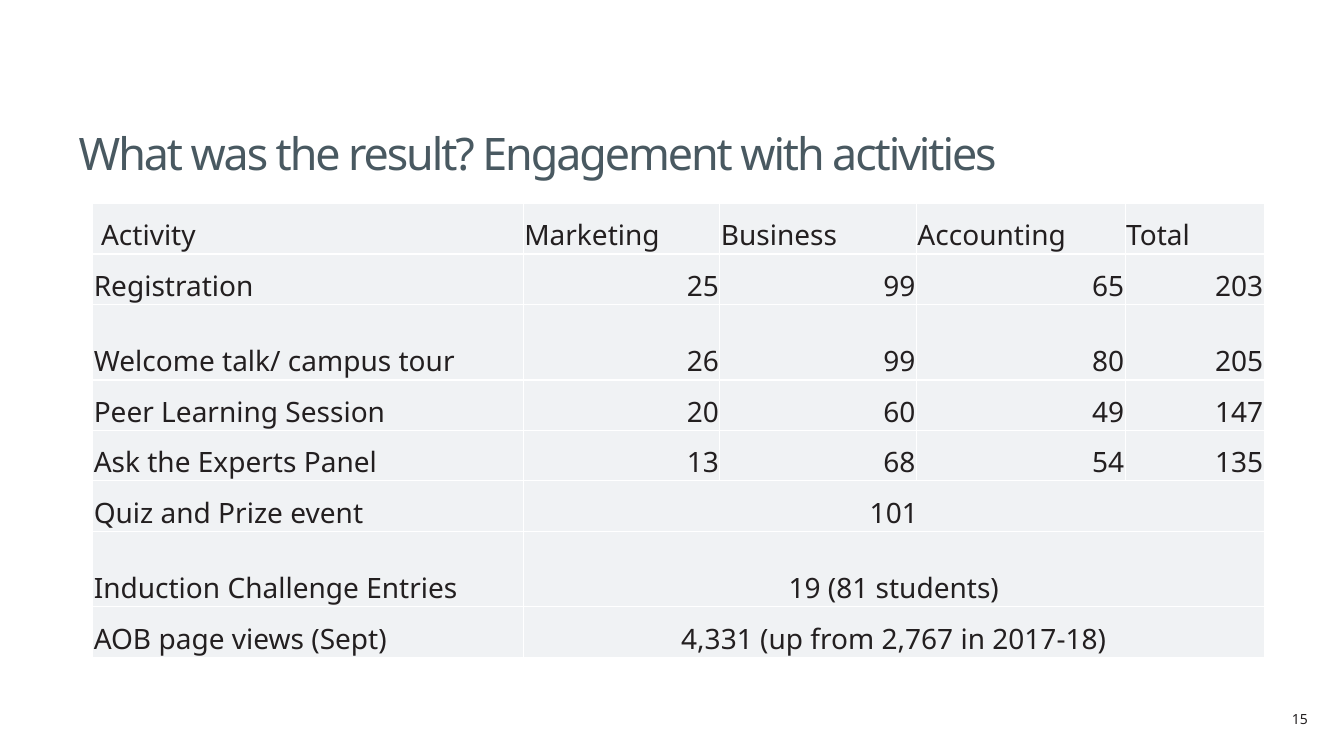
import pptx
import pptx.dml.color
import pptx.enum.text
import pptx.oxml
import pptx.oxml.ns
import pptx.util

Inches = pptx.util.Inches
Align = pptx.enum.text.PP_ALIGN
Anchor = pptx.enum.text.MSO_ANCHOR

COLUMN_WIDTHS = [4.27, 1.95, 1.95, 2.07, 1.38]
ROW_HEIGHTS = [0.5, 0.5, 0.75, 0.5, 0.5, 0.5, 0.75, 0.5]
ACTIVITY_ROWS = [
    [" Activity", "Marketing", "Business", "Accounting", "Total"],
    ["Registration", "25", "99", "65", "203"],
    ["Welcome talk/ campus tour", "26", "99", "80", "205"],
    ["Peer Learning Session", "20", "60", "49", "147"],
    ["Ask the Experts Panel", "13", "68", "54", "135"],
    ["Quiz and Prize event", "101"],
    ["Induction Challenge Entries", "19 (81 students)"],
    ["AOB page views (Sept)", "4,331 (up from 2,767 in 2017-18)"],
]


def color(value):
    return pptx.dml.color.RGBColor.from_string(value)


def write(text_frame, text, size, ink, font="Noto Sans", align=Align.LEFT, spacing=None):
    paragraph = text_frame.paragraphs[0]
    paragraph.alignment = align
    run = paragraph.add_run()
    run.text = text
    run.font.name = font
    run.font.size = pptx.util.Pt(size)
    run.font.bold = False
    run.font.color.rgb = color(ink)
    if spacing is not None:
        run.font._element.set("spc", str(round(spacing * 100)))


class SlideBuilder:
    """Hold the style and current slide, and add each kind of element."""

    ink = "231F20"
    title_ink = "495961"
    cell_fill = "F0F2F4"
    border = "FFFFFF"

    def __init__(self, presentation):
        self.slide = presentation.slides.add_slide(presentation.slide_layouts[5])
        self.slide.background.fill.solid()
        self.slide.background.fill.fore_color.rgb = color("FFFFFF")

    def title(self, text, left, top, width, height):
        shape = self.slide.shapes.title
        shape.left, shape.top = Inches(left), Inches(top)
        shape.width, shape.height = Inches(width), Inches(height)
        frame = shape.text_frame
        frame.word_wrap = True
        frame.auto_size = pptx.enum.text.MSO_AUTO_SIZE.NONE
        frame.vertical_anchor = Anchor.BOTTOM
        frame.margin_bottom = 0
        write(frame, text, 32, self.title_ink, spacing=-1.5)

    def page_number(self, text, left, top, width, height):
        shape = self.slide.shapes.add_textbox(
            Inches(left), Inches(top), Inches(width), Inches(height))
        shape.text_frame.word_wrap = True
        write(shape.text_frame, text, 10, self.ink, align=Align.RIGHT)

    def cell(self, cell, text, align):
        cell.margin_left = cell.margin_right = cell.margin_top = Inches(0.01)
        cell.margin_bottom = 0
        cell.vertical_anchor = Anchor.BOTTOM
        write(cell.text_frame, text, 20, self.ink, align=align)

    def cell_style(self, cell):
        properties = cell._tc.get_or_add_tcPr()
        for side in ("lnL", "lnR", "lnT", "lnB"):
            properties.append(pptx.oxml.parse_xml(
                f'<a:{side} {pptx.oxml.ns.nsdecls("a")} w="12700"><a:solidFill>'
                f'<a:srgbClr val="{self.border}"/></a:solidFill></a:{side}>'))
        cell.fill.solid()
        cell.fill.fore_color.rgb = color(self.cell_fill)

    def table(self, rows, left, top, widths, heights):
        table = self.slide.shapes.add_table(
            len(rows), len(widths), Inches(left), Inches(top),
            Inches(sum(widths)), Inches(sum(heights))).table
        table.first_row = table.horz_banding = False
        for column, width in zip(table.columns, widths):
            column.width = Inches(width)
        for row, height in zip(table.rows, heights):
            row.height = Inches(height)
        for cell in table.iter_cells():
            self.cell_style(cell)
        for row_index, values in enumerate(rows):
            merged = len(values) < len(widths)
            if merged:
                table.cell(row_index, 1).merge(table.cell(row_index, len(widths) - 1))
            for column_index, text in enumerate(values):
                if row_index == 0 or column_index == 0:
                    align = Align.LEFT
                else:
                    align = Align.CENTER if merged else Align.RIGHT
                self.cell(table.cell(row_index, column_index), text, align)


def main():
    presentation = pptx.Presentation()
    presentation.slide_width = Inches(13.33)
    presentation.slide_height = Inches(7.5)
    builder = SlideBuilder(presentation)
    builder.title("What was the result? Engagement with activities", 0.68, 0.76, 11.86, 1.02)
    builder.table(ACTIVITY_ROWS, 0.92, 2.02, COLUMN_WIDTHS, ROW_HEIGHTS)
    builder.page_number("15", 12.02, 7, 1.05, 0.27)
    presentation.save("out.pptx")


if __name__ == "__main__":
    main()
